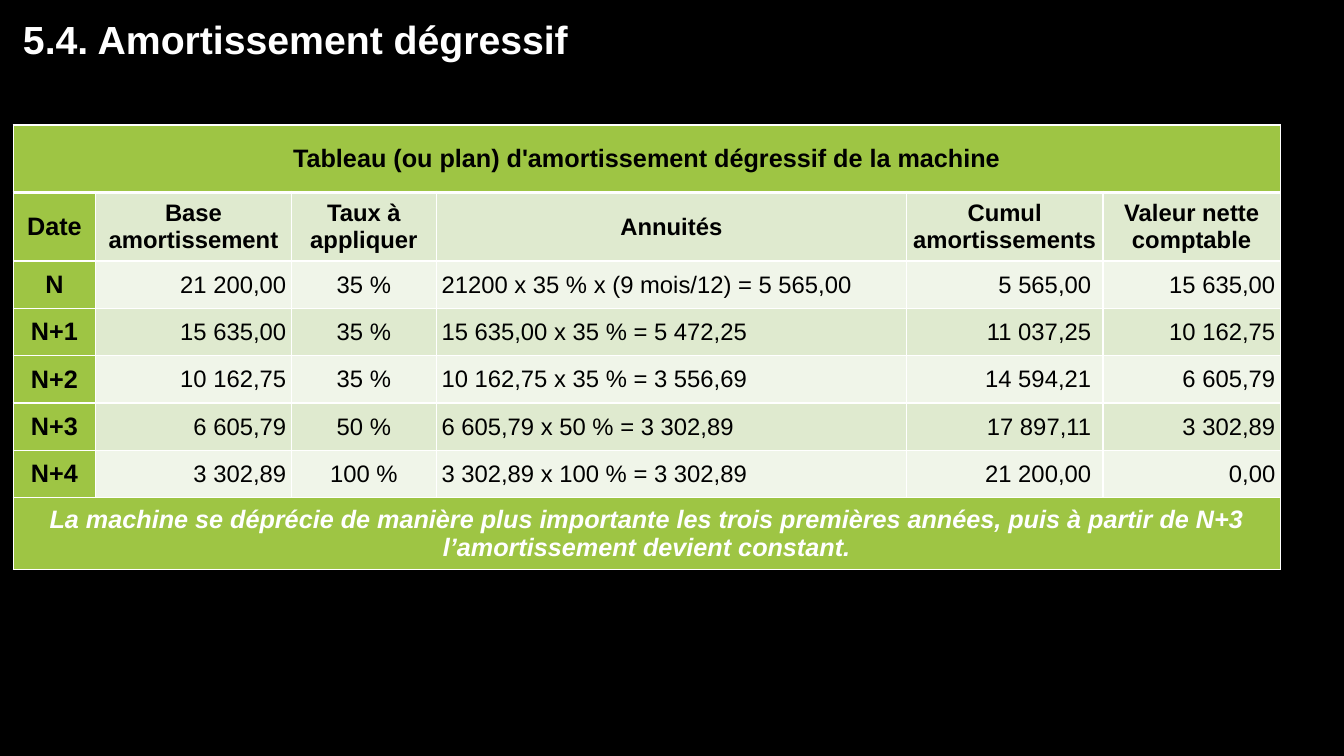
from lxml.etree import SubElement
from pptx import Presentation
from pptx.dml.color import RGBColor
from pptx.enum.text import MSO_ANCHOR as Anchor, MSO_AUTO_SIZE as AutoSize, PP_ALIGN as Align
from pptx.oxml.ns import qn
from pptx.util import Inches, Pt

BLACK = RGBColor(0x00, 0x00, 0x00)
WHITE = RGBColor(0xFF, 0xFF, 0xFF)
GREEN = RGBColor(0x9E, 0xC5, 0x44)
LIGHT_GREEN = RGBColor(0xDF, 0xEA, 0xCF)
PALE_GREEN = RGBColor(0xF0, 0xF5, 0xE9)

TITLE = "5.4. Amortissement dégressif"
CAPTION = "Tableau (ou plan) d'amortissement dégressif de la machine"
CONCLUSION = (
    "La machine se déprécie de manière plus importante les trois premières années, "
    "puis à partir de N+3 l’amortissement devient constant."
)
HEADINGS = ["Date", "Base amortissement", "Taux à appliquer", "Annuités",
            "Cumul amortissements", "Valeur nette comptable"]
YEARS = [
    ["N", "21 200,00", "35 %", "21200 x 35 % x (9 mois/12) = 5 565,00", "5 565,00 ", "15 635,00"],
    ["N+1", "15 635,00", "35 %", "15 635,00 x 35 % = 5 472,25", "11 037,25 ", "10 162,75"],
    ["N+2", "10 162,75", "35 %", "10 162,75 x 35 % = 3 556,69", "14 594,21 ", "6 605,79"],
    ["N+3", "6 605,79", "50 %", "6 605,79 x 50 % = 3 302,89", "17 897,11 ", "3 302,89"],
    ["N+4", "3 302,89", "100 %", "3 302,89 x 100 % = 3 302,89", "21 200,00 ", "0,00"],
]
ALIGNMENTS = [Align.CENTER, Align.RIGHT, Align.CENTER, Align.LEFT, Align.RIGHT, Align.RIGHT]
COLUMN_WIDTHS = [0.82, 1.94, 1.44, 4.66, 1.95, 1.76]
ROW_HEIGHTS = [0.67, 0.68] + [0.47] * len(YEARS) + [0.71]


def write_text(frame, text, size=17, color=BLACK, bold=False, italic=False,
               align=Align.LEFT, after=0):
    """Fill a text frame with one formatted paragraph."""
    para = frame.paragraphs[0]
    para.alignment = align
    para.space_before = Pt(6)
    para.space_after = Pt(after)
    span = para.add_run()
    span.text = text
    span.font.name = "Arial"
    span.font.size = Pt(size)
    span.font.bold = bold
    span.font.italic = italic
    span.font.color.rgb = color


def add_title(page, text):
    """Add the heading at the top of the page."""
    box = page.shapes.add_textbox(Inches(0.13), Inches(0.1), Inches(12.87), Inches(0.57))
    box.text_frame.word_wrap = True
    box.text_frame.auto_size = AutoSize.SHAPE_TO_FIT_TEXT
    write_text(box.text_frame, text, size=28, color=WHITE, bold=True)


def style_cell(cell, fill, top=1, bottom=1):
    """Set the borders, fill, margins and anchor of a cell."""
    properties = cell._tc.get_or_add_tcPr()
    for side, width in (("L", 1), ("R", 1), ("T", top), ("B", bottom)):
        line = SubElement(properties, qn(f"a:ln{side}"), w=str(Pt(width)))
        solid = SubElement(line, qn("a:solidFill"))
        SubElement(solid, qn("a:srgbClr"), val=str(WHITE))
    cell.fill.solid()
    cell.fill.fore_color.rgb = fill
    cell.margin_left = cell.margin_right = Inches(0.05)
    cell.margin_top = cell.margin_bottom = 0
    cell.vertical_anchor = Anchor.MIDDLE


def add_banner(table, row, text, bottom=1, **text_format):
    """Merge a table row into one green cell with centred text."""
    last = len(COLUMN_WIDTHS) - 1
    table.cell(row, 0).merge(table.cell(row, last))
    for column in range(last + 1):
        style_cell(table.cell(row, column), GREEN, bottom=bottom)
    write_text(table.cell(row, 0).text_frame, text, size=18, bold=True,
               align=Align.CENTER, **text_format)


def add_row(table, row, values, heading=False):
    """Fill a table row whose first cell is a green label."""
    band = LIGHT_GREEN if row % 2 else PALE_GREEN
    for column, value in enumerate(values):
        label = column == 0
        cell = table.cell(row, column)
        style_cell(cell, GREEN if label else band, top=3 if heading else 1)
        write_text(cell.text_frame, value, size=18 if label else 17, bold=label or heading,
                   align=Align.CENTER if heading else ALIGNMENTS[column])


def add_schedule(page):
    """Add the depreciation table."""
    frame = page.shapes.add_table(
        len(ROW_HEIGHTS), len(COLUMN_WIDTHS), Inches(0.13), Inches(1.24),
        Inches(sum(COLUMN_WIDTHS)), Inches(sum(ROW_HEIGHTS)))
    table = frame.table
    table.first_row = table.horz_banding = False
    for column, width in zip(table.columns, COLUMN_WIDTHS):
        column.width = Inches(width)
    for row, height in zip(table.rows, ROW_HEIGHTS):
        row.height = Inches(height)
    add_banner(table, 0, CAPTION, bottom=3, after=6)
    add_row(table, 1, HEADINGS, heading=True)
    for row, values in enumerate(YEARS, start=2):
        add_row(table, row, values)
    add_banner(table, len(ROW_HEIGHTS) - 1, CONCLUSION, color=WHITE, italic=True)


def main():
    """Build the slide and save the deck."""
    deck = Presentation()
    deck.slide_width = Inches(13.33)
    deck.slide_height = Inches(7.5)
    page = deck.slides.add_slide(deck.slide_layouts[6])
    page.background.fill.solid()
    page.background.fill.fore_color.rgb = BLACK
    add_title(page, TITLE)
    add_schedule(page)
    deck.save("out.pptx")


if __name__ == "__main__":
    main()
